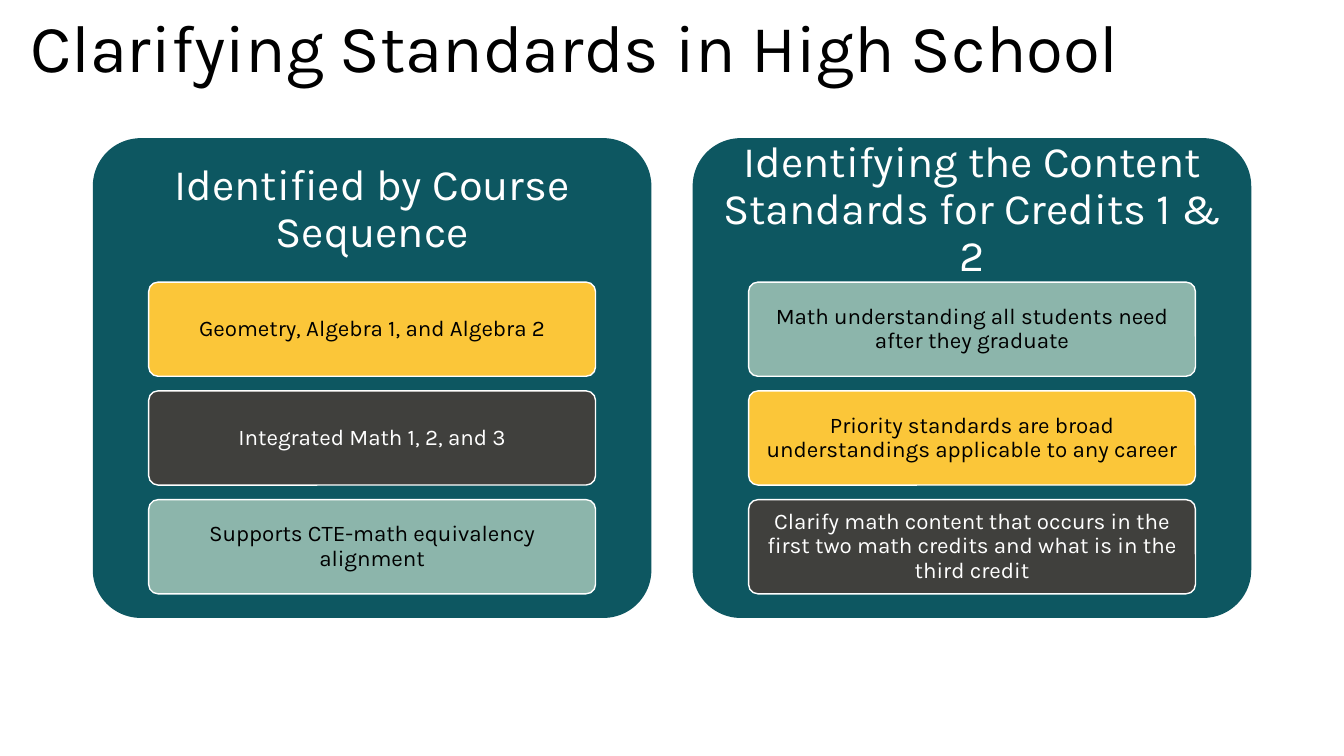
"""Build the slide on clarifying high school standards."""
from dataclasses import dataclass

from pptx import Presentation
from pptx.dml.color import RGBColor
from pptx.enum.shapes import MSO_SHAPE
from pptx.enum.text import MSO_ANCHOR, MSO_AUTO_SIZE, PP_ALIGN
from pptx.shapes.autoshape import Shape
from pptx.slide import Slide
from pptx.text.text import TextFrame, _Paragraph
from pptx.util import Pt

FONT = "Karla"
BLACK, WHITE, TEAL = "000000", "FFFFFF", "0D5761"
GOLD, CHARCOAL, SAGE = "FBC639", "40403D", "8CB5AB"

PANEL_LEFT, PANEL_TOP = 66.3, 98.7
PANEL_WIDTH, PANEL_HEIGHT = 399, 342.7
PANEL_PITCH = 428.5
HEADING_HEIGHT = 0.3 * PANEL_HEIGHT
CARD_WIDTH, CARD_HEIGHT = 0.8 * PANEL_WIDTH, 67.3
CARD_PITCH = 77.7


@dataclass
class Card:
    text: str
    fill: str
    color: str = BLACK


@dataclass
class Panel:
    heading: str
    cards: list[Card]


PANELS = [
    Panel("Identified by Course Sequence", [
        Card("Geometry, Algebra 1, and Algebra 2", GOLD),
        Card("Integrated Math 1, 2, and 3", CHARCOAL, WHITE),
        Card("Supports CTE-math equivalency alignment", SAGE),
    ]),
    Panel("Identifying the Content Standards for Credits 1 & 2", [
        Card("Math understanding all students need after they graduate", SAGE),
        Card("Priority standards are broad understandings applicable to any career", GOLD),
        Card("Clarify math content that occurs in the first two math credits "
             "and what is in the third credit", CHARCOAL, WHITE),
    ]),
]


def rgb(color: str) -> RGBColor:
    """Turn a hex string into a colour."""
    return RGBColor.from_string(color)


def write(frame: TextFrame, text: str, size: float, color: str) -> _Paragraph:
    """Write one paragraph into a wrapping frame."""
    frame.word_wrap = True
    para = frame.paragraphs[0]
    para.text = text
    para.font.name = FONT
    para.font.size = Pt(size)
    para.font.color.rgb = rgb(color)
    return para


def write_centred(frame: TextFrame, text: str, size: float, color: str,
                  side: float, edge: float) -> None:
    """Write centred text with the given side and edge margins."""
    frame.margin_left = frame.margin_right = Pt(side)
    frame.margin_top = frame.margin_bottom = Pt(edge)
    frame.vertical_anchor = MSO_ANCHOR.MIDDLE
    para = write(frame, text, size, color)
    para.alignment = PP_ALIGN.CENTER
    para.line_spacing = 0.9


def add_rounded(page: Slide, left: float, top: float, width: float,
                height: float, fill: str) -> Shape:
    """Add a filled rounded rectangle without outline or shadow."""
    box = page.shapes.add_shape(MSO_SHAPE.ROUNDED_RECTANGLE,
                                Pt(left), Pt(top), Pt(width), Pt(height))
    box.adjustments[0] = 0.1
    box.shadow.inherit = False
    box.fill.solid()
    box.fill.fore_color.rgb = rgb(fill)
    box.line.fill.background()
    return box


def add_card(page: Slide, card: Card, left: float, top: float) -> None:
    """Add one outlined card with its text."""
    box = add_rounded(page, left, top, CARD_WIDTH, CARD_HEIGHT, card.fill)
    box.line.color.rgb = rgb(WHITE)
    box.line.width = Pt(1)
    write_centred(box.text_frame, card.text, 16, card.color, 3, 2.4)


def add_panel(page: Slide, panel: Panel, left: float) -> None:
    """Add a panel with its heading and stacked cards."""
    add_rounded(page, left, PANEL_TOP, PANEL_WIDTH, PANEL_HEIGHT, TEAL)
    heading = page.shapes.add_textbox(Pt(left), Pt(PANEL_TOP),
                                      Pt(PANEL_WIDTH), Pt(HEADING_HEIGHT))
    write_centred(heading.text_frame, panel.heading, 31, WHITE, 9.3, 9.3)
    card_left = left + (PANEL_WIDTH - CARD_WIDTH) / 2
    for row, card in enumerate(panel.cards):
        add_card(page, card, card_left, PANEL_TOP + HEADING_HEIGHT + row * CARD_PITCH)


def main() -> None:
    """Build and save the deck."""
    deck = Presentation()
    deck.slide_width, deck.slide_height = Pt(960), Pt(540)
    page = deck.slides.add_slide(deck.slide_layouts[6])
    title = page.shapes.add_textbox(Pt(14.4), Pt(0), Pt(859), Pt(65.5))
    write(title.text_frame, "Clarifying Standards in High School", 48, BLACK)
    title.text_frame.auto_size = MSO_AUTO_SIZE.SHAPE_TO_FIT_TEXT
    for column, panel in enumerate(PANELS):
        add_panel(page, panel, PANEL_LEFT + column * PANEL_PITCH)
    deck.save("out.pptx")


if __name__ == "__main__":
    main()
